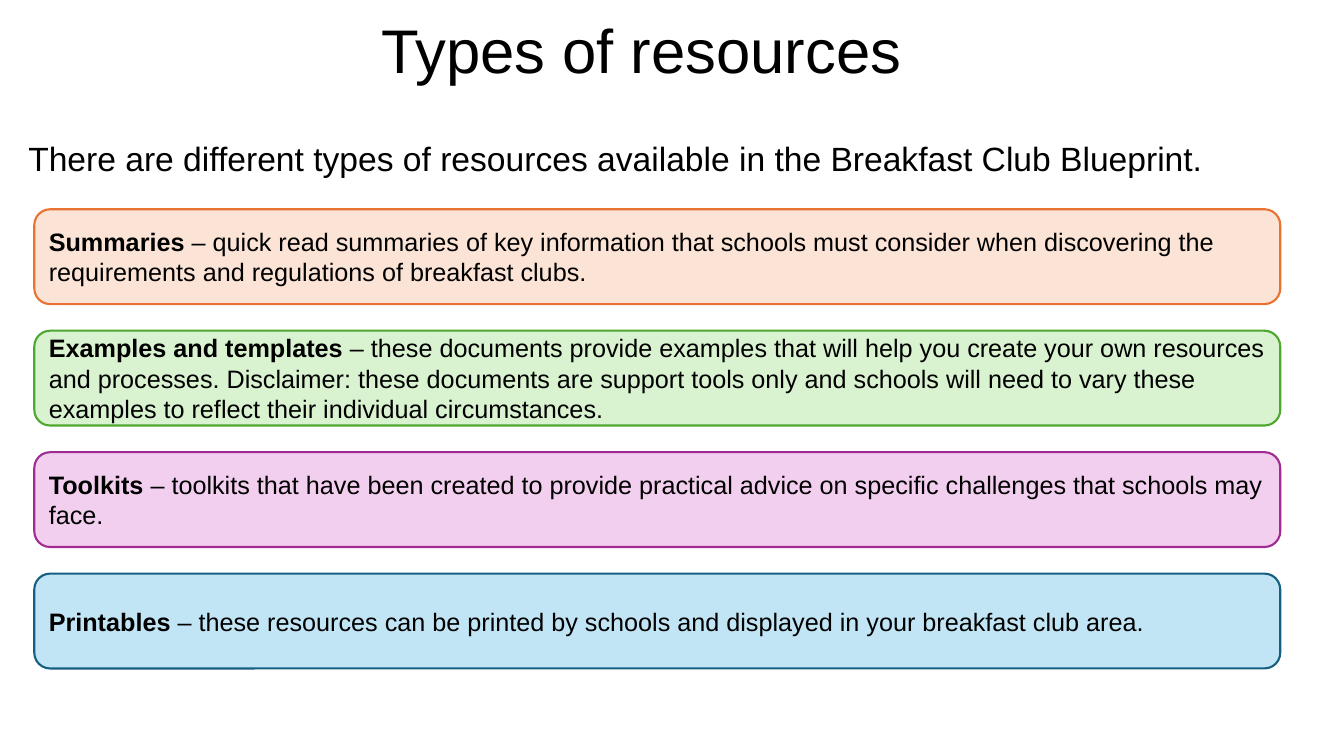
from dataclasses import dataclass

from lxml import etree
from pptx import Presentation
from pptx import util as u
from pptx.dml.color import RGBColor
from pptx.enum import shapes, text
from pptx.oxml.ns import qn


@dataclass(frozen=True)
class Theme:
    font: str = "Arial"
    ink: str = "000000"
    title: int = 44
    lead: int = 24
    card: int = 18
    edge: float = 1.5


THEME = Theme()

CARDS = [
    ("Summaries", "quick read summaries of key information that schools must consider when "
     "discovering the requirements and regulations of breakfast clubs.", "FBE3D6", "E97132"),
    ("Examples and templates", "these documents provide examples that will help you create your own "
     "resources and processes. Disclaimer: these documents are support tools only and schools will "
     "need to vary these examples to reflect their individual circumstances.", "D9F2D0", "4EA72E"),
    ("Toolkits", "toolkits that have been created to provide practical advice on specific "
     "challenges that schools may face.", "F2CFEE", "A02B93"),
    ("Printables", "these resources can be printed by schools and displayed in your breakfast "
     "club area.", "C1E5F5", "156082"),
]


def apply(item, form):
    for key, val in form.items():
        setattr(item, key, val)


def place(item, box):
    apply(item, dict(zip(("left", "top", "width", "height"), map(u.Pt, box))))


def write(para, words, size, bold=False):
    run = para.add_run()
    run.text = words
    apply(run.font, {"name": THEME.font, "size": u.Pt(size), "bold": bold})
    run.font.color.rgb = RGBColor.from_string(THEME.ink)


def add_title(slide, box, words):
    title = slide.shapes.title
    place(title, box)
    apply(title.text_frame, {"vertical_anchor": text.MSO_ANCHOR.MIDDLE,
                             "auto_size": text.MSO_AUTO_SIZE.NONE})
    para = title.text_frame.paragraphs[0]
    apply(para, {"alignment": text.PP_ALIGN.LEFT, "line_spacing": 0.9})
    write(para, words, THEME.title)


def add_lead(slide, box, words):
    body = slide.placeholders[1]
    place(body, box)
    body.text_frame.auto_size = text.MSO_AUTO_SIZE.NONE
    para = body.text_frame.paragraphs[0]
    apply(para, {"line_spacing": 0.9, "space_before": u.Pt(0)})
    props = para._p.get_or_add_pPr()
    props.set("marL", "0")
    props.set("indent", "0")
    etree.SubElement(props, qn("a:buNone"))
    write(para, words, THEME.lead)


def add_card(slide, box, name, words, fill, edge):
    card = slide.shapes.add_shape(shapes.MSO_SHAPE.ROUNDED_RECTANGLE, *map(u.Pt, box))
    card.shadow.inherit = False
    card.fill.solid()
    card.fill.fore_color.rgb = RGBColor.from_string(fill)
    card.line.color.rgb = RGBColor.from_string(edge)
    card.line.width = u.Pt(THEME.edge)
    apply(card.text_frame, {"word_wrap": True, "vertical_anchor": text.MSO_ANCHOR.MIDDLE})
    para = card.text_frame.paragraphs[0]
    para.alignment = text.PP_ALIGN.LEFT
    write(para, name, THEME.card, True)
    write(para, " – " + words, THEME.card)


def add_stack(slide, box, cards, gap):
    left, top, width, height = box
    tall = (height - gap * (len(cards) - 1)) / len(cards)
    for row, card in enumerate(cards):
        add_card(slide, (left, top + row * (tall + gap), width, tall), *card)


def main():
    deck = Presentation()
    apply(deck, {"slide_width": u.Pt(960), "slide_height": u.Pt(540)})
    slide = deck.slides.add_slide(deck.slide_layouts[1])
    add_title(slide, (265, 7, 667.5, 62.5), "Types of resources")
    add_lead(slide, (13, 98, 934.5, 379.5),
             "There are different types of resources available in the Breakfast Club Blueprint.")
    add_stack(slide, (24.5, 149.5, 890, 328), CARDS, 19)
    deck.save("out.pptx")


if __name__ == "__main__":
    main()
